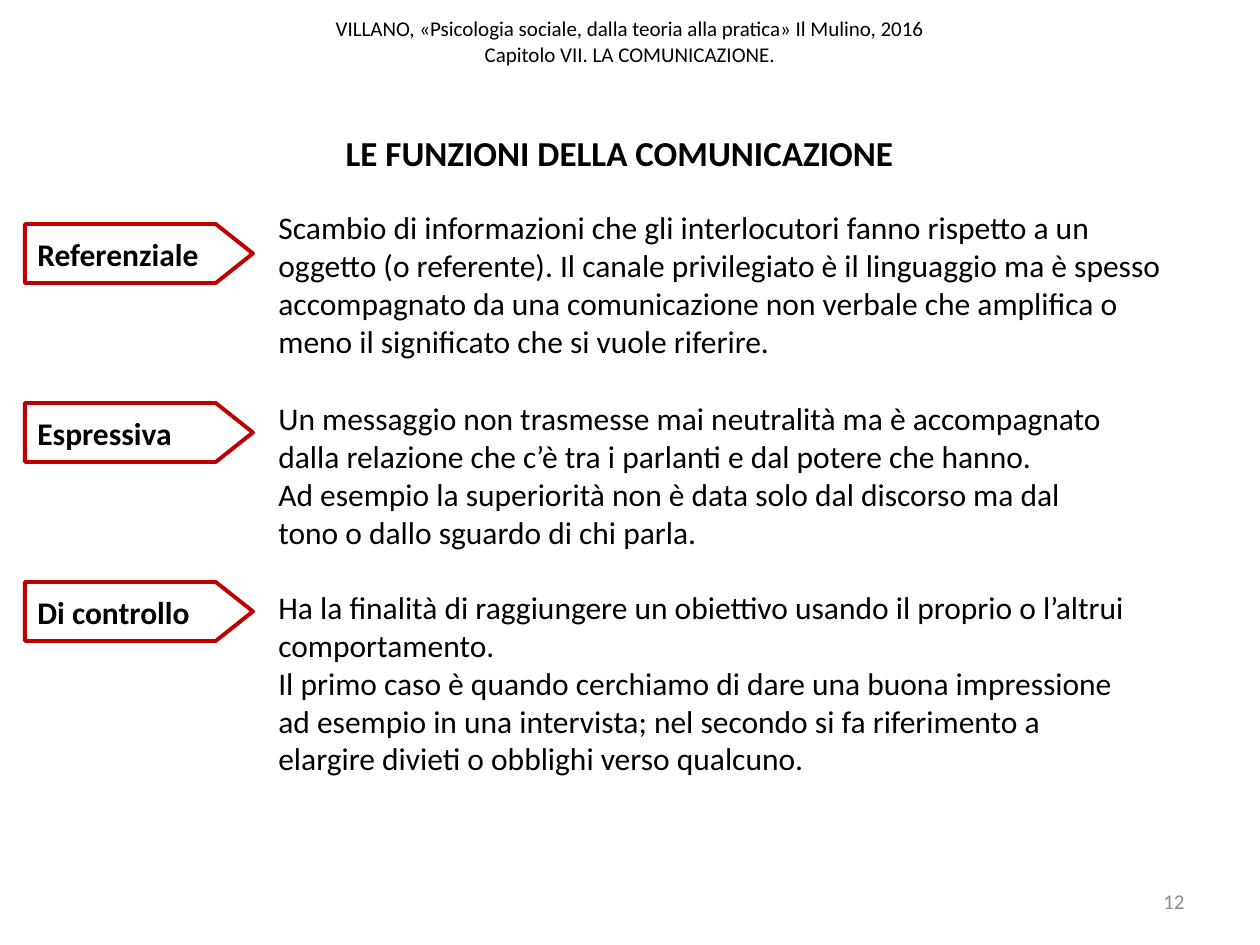
import pptx
import pptx.dml.color
import pptx.enum.shapes
import pptx.enum.text
import pptx.util

RGB = pptx.dml.color.RGBColor
ALIGN = pptx.enum.text.PP_ALIGN
ANCHOR = pptx.enum.text.MSO_ANCHOR
BLACK = RGB(0x00, 0x00, 0x00)
GREY = RGB(0x8C, 0x8C, 0x8C)
RED = RGB(0xC0, 0x00, 0x00)
FONT = "Calibri"
SCALE = 914400 / 126

ROWS = [
    ("Referenziale", (266, 202, 915, 165), [
        "Scambio di informazioni che gli interlocutori fanno rispetto a un oggetto "
        "(o referente). Il canale privilegiato è il linguaggio ma è spesso accompagnato "
        "da una comunicazione non verbale che amplifica o meno il significato che si "
        "vuole riferire.",
    ]),
    ("Espressiva", (266, 393, 859, 165), [
        "Un messaggio non trasmesse mai neutralità ma è accompagnato dalla relazione "
        "che c’è tra i parlanti e dal potere che hanno.",
        "Ad esempio la superiorità non è data solo dal discorso ma dal tono o dallo "
        "sguardo di chi parla.",
    ]),
    ("Di controllo", (266, 582, 879, 204), [
        "Ha la finalità di raggiungere un obiettivo usando il proprio o l’altrui "
        "comportamento.",
        "Il primo caso è quando cerchiamo di dare una buona impressione ad esempio in "
        "una intervista; nel secondo si fa riferimento a elargire divieti o obblighi "
        "verso qualcuno.",
    ]),
]


def px(*nums):
    """Turn px lengths into EMU."""
    return [pptx.util.Emu(round(num * SCALE)) for num in nums]


def write(shape, lines, size=18, bold=False, color=BLACK, align=ALIGN.LEFT,
          anchor=ANCHOR.TOP, wrap=True):
    """Fill a shape with formatted paragraphs."""
    frame = shape.text_frame
    frame.auto_size = pptx.enum.text.MSO_AUTO_SIZE.NONE
    frame.word_wrap = wrap
    frame.vertical_anchor = anchor
    for i, line in enumerate(lines):
        para = frame.add_paragraph() if i else frame.paragraphs[0]
        para.text = line
        para.alignment = align
        for run in para.runs:
            font = run.font
            font.name = FONT
            font.size = pptx.util.Pt(size)
            font.bold = bold
            font.color.rgb = color


def add_text(slide, box, lines, **form):
    """Add a text box."""
    write(slide.shapes.add_textbox(*px(*box)), lines, **form)


def add_title(slide, box, text):
    """Move and fill the title placeholder."""
    title = slide.shapes.title
    title.left, title.top, title.width, title.height = px(*box)
    write(title, [text], size=20, bold=True, wrap=False)


def add_tag(slide, box, text):
    """Add a red outlined arrow tag."""
    tag = slide.shapes.add_shape(pptx.enum.shapes.MSO_SHAPE.PENTAGON, *px(*box))
    tag.adjustments[0] = 0.63
    tag.shadow.inherit = False
    tag.fill.background()
    tag.line.color.rgb = RED
    tag.line.width = pptx.util.Pt(2.25)
    write(tag, [text], bold=True, anchor=ANCHOR.MIDDLE)


def main():
    """Build and save the slide."""
    deck = pptx.Presentation()
    deck.slide_width, deck.slide_height = px(1260, 945)
    slide = deck.slides.add_slide(deck.slide_layouts[5])
    add_text(slide, (0, -14, 1260, 110),
             ["VILLANO, «Psicologia sociale, dalla teoria alla pratica» Il Mulino, 2016\v"
              "Capitolo VII. LA COMUNICAZIONE."],
             size=12, align=ALIGN.CENTER, anchor=ANCHOR.MIDDLE)
    add_text(slide, (903, 876, 294, 50), ["12"], size=12, color=GREY,
             align=ALIGN.RIGHT, anchor=ANCHOR.MIDDLE)
    add_title(slide, (333, 125, 577, 55), "LE FUNZIONI DELLA COMUNICAZIONE")
    for i, (name, box, lines) in enumerate(ROWS):
        add_tag(slide, (25, 224 + 179 * i, 228, 59), name)
        add_text(slide, box, lines)
    deck.save("out.pptx")


if __name__ == "__main__":
    main()
